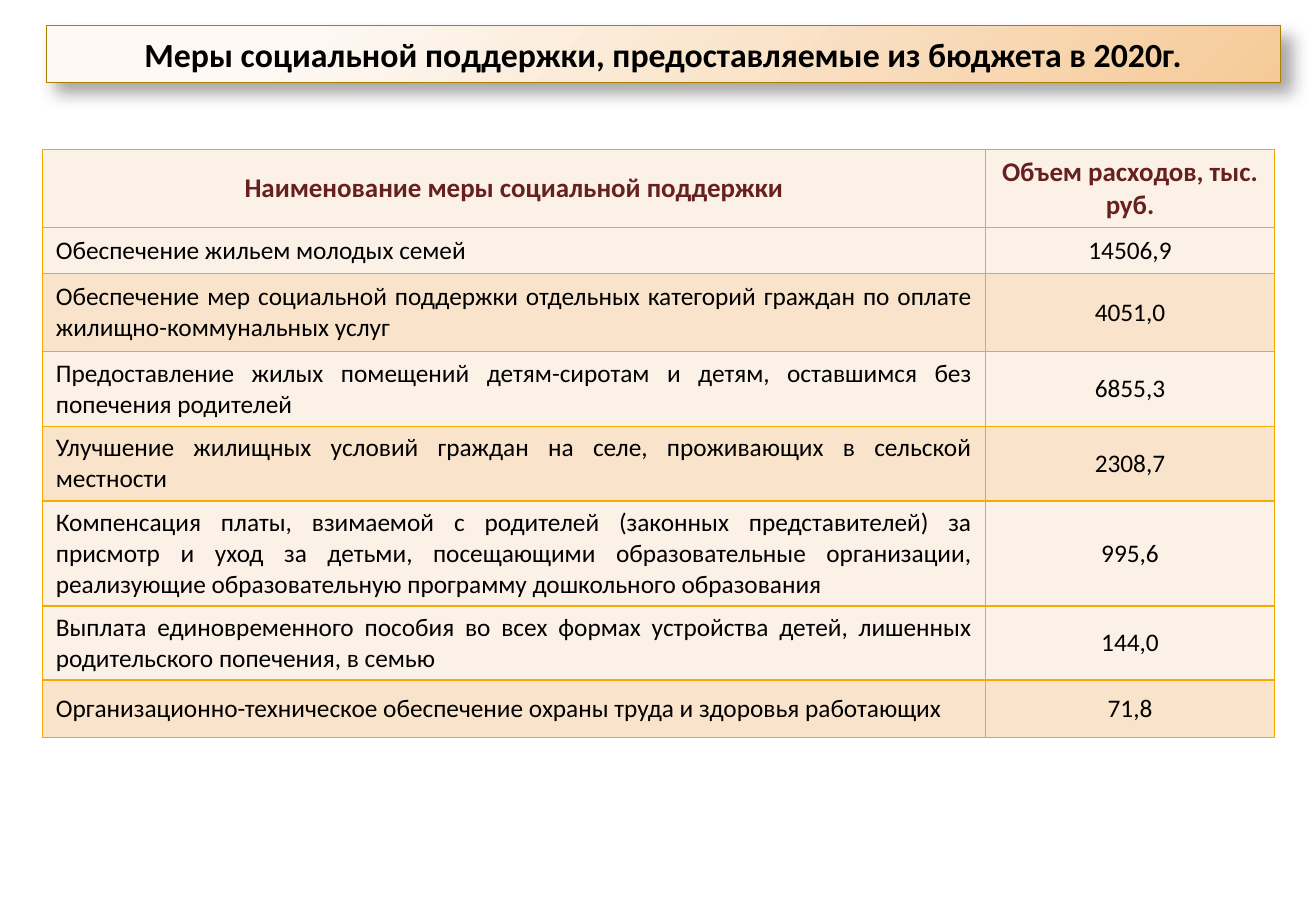
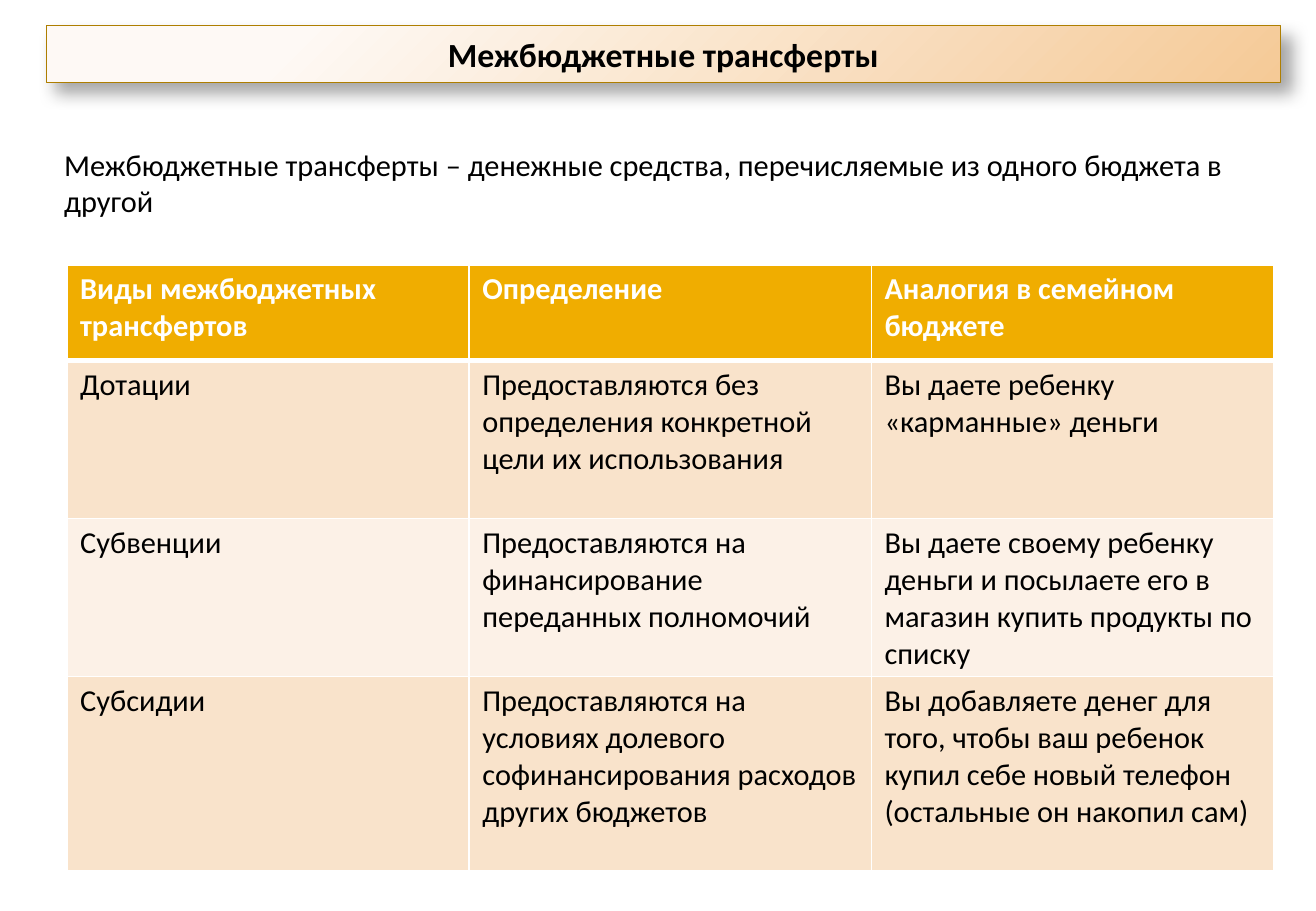
from pptx import Presentation
from pptx.dml.color import RGBColor
from pptx.enum.text import MSO_ANCHOR, MSO_AUTO_SIZE, PP_ALIGN
from pptx.oxml import parse_xml
from pptx.oxml.ns import nsdecls, qn
from pptx.util import Inches, Pt

LEFT, CENTER, JUSTIFY = PP_ALIGN.LEFT, PP_ALIGN.CENTER, PP_ALIGN.JUSTIFY
TOP, MIDDLE = MSO_ANCHOR.TOP, MSO_ANCHOR.MIDDLE
NO_FIT, GROW = MSO_AUTO_SIZE.NONE, MSO_AUTO_SIZE.SHAPE_TO_FIT_TEXT
TITLE_ONLY = 5

FONT = "Calibri"
BLACK, WHITE, MAROON = "000000", "FFFFFF", "672020"
GOLD, DARK_GOLD = "F0AD00", "AE7E00"
CREAM, PEACH = "FCF1E7", "F9E3CB"
BAND_LIGHT, BAND_DARK = "FEF9F5", "F5CA97"

SUPPORT_ROWS = [
    ("Наименование меры социальной поддержки", "Объем расходов, тыс. руб."),
    ("Обеспечение жильем молодых семей", "14506,9"),
    ("Обеспечение мер социальной поддержки отдельных категорий граждан "
     "по оплате жилищно-коммунальных услуг", "4051,0"),
    ("Предоставление жилых помещений детям-сиротам и детям, "
     "оставшимся без попечения родителей", "6855,3"),
    ("Улучшение жилищных условий граждан на селе, "
     "проживающих в сельской местности", "2308,7"),
    ("Компенсация платы, взимаемой с родителей (законных представителей) "
     "за присмотр и уход за детьми, посещающими образовательные организации, "
     "реализующие образовательную программу дошкольного образования", "995,6"),
    ("Выплата единовременного пособия во всех формах устройства детей, "
     "лишенных родительского попечения, в семью", "144,0"),
    ("Организационно-техническое обеспечение охраны труда "
     "и здоровья работающих", "71,8"),
]
SUPPORT_HEIGHTS = [0.64, 0.38, 0.64, 0.62, 0.61, 0.86, 0.61, 0.47]
SUPPORT_FILLS = [CREAM, CREAM, PEACH, CREAM, PEACH, CREAM, CREAM, PEACH]

TRANSFER_ROWS = [
    ("Виды межбюджетных трансфертов", "Определение",
     "Аналогия в семейном бюджете"),
    ("Дотации",
     "Предоставляются без определения конкретной цели их использования",
     "Вы даете ребенку «карманные» деньги"),
    ("Субвенции",
     "Предоставляются на финансирование переданных полномочий",
     "Вы даете своему ребенку деньги и посылаете его в магазин "
     "купить продукты по списку"),
    ("Субсидии",
     "Предоставляются на условиях долевого софинансирования расходов "
     "других бюджетов",
     "Вы добавляете денег для того, чтобы ваш ребенок купил себе "
     "новый телефон (остальные он накопил сам)"),
]
TRANSFER_HEIGHTS = [0.79, 1.3, 1.3, 1.6]
TRANSFER_FILLS = [GOLD, PEACH, CREAM, PEACH]


def color(value):
    return RGBColor.from_string(value)


def write(frame, text, size, ink=BLACK, bold=False, align=LEFT):
    frame.text = text
    para = frame.paragraphs[0]
    para.alignment = align
    para.font.name = FONT
    para.font.size = Pt(size)
    para.font.bold = bold
    para.font.color.rgb = color(ink)


def fill_band(shape):
    shape.fill.gradient()
    stops = zip(shape.fill.gradient_stops, (0.2, 1), (BAND_LIGHT, BAND_DARK))
    for stop, position, value in stops:
        stop.position = position
        stop.color.rgb = color(value)
    gradient = shape._element.spPr.find(qn("a:gradFill"))
    gradient.remove(gradient.find(qn("a:lin")))
    gradient.append(parse_xml(
        f'<a:path {nsdecls("a")} path="circle"><a:fillToRect l="-15000" '
        't="-15000" r="115000" b="115000"/></a:path>'))


def cast_shadow(shape):
    shape.shadow.inherit = False
    effects = shape._element.spPr.find(qn("a:effectLst"))
    effects.append(parse_xml(
        f'<a:outerShdw {nsdecls("a")} blurRad="{Pt(10.2)}" dist="{Pt(8)}" '
        f'dir="2700000" algn="tl" rotWithShape="0"><a:srgbClr val="{BLACK}">'
        '<a:alpha val="35000"/></a:srgbClr></a:outerShdw>'))


def add_titled_slide(deck, text):
    page = deck.slides.add_slide(deck.slide_layouts[TITLE_ONLY])
    title = page.shapes.title
    title.left, title.top = Inches(0.38), Inches(0.21)
    title.width, title.height = Inches(10.16), Inches(0.47)
    fill_band(title)
    title.line.color.rgb = color(DARK_GOLD)
    title.line.width = Pt(0.75)
    cast_shadow(title)
    frame = title.text_frame
    frame.auto_size = NO_FIT
    frame.word_wrap = True
    frame.vertical_anchor = MIDDLE
    write(frame, text, 20, bold=True, align=CENTER)
    return page


def set_borders(cell, value, widths):
    properties = cell._tc.get_or_add_tcPr()
    for index, (side, width) in enumerate(zip("LRTB", widths)):
        properties.insert(index, parse_xml(
            f'<a:ln{side} {nsdecls("a")} w="{Pt(width)}"><a:solidFill>'
            f'<a:srgbClr val="{value}"/></a:solidFill></a:ln{side}>'))


def add_grid(page, left, top, widths, heights):
    frame = page.shapes.add_table(
        len(heights), len(widths), Inches(left), Inches(top),
        Inches(sum(widths)), Inches(sum(heights)))
    table = frame.table
    table.horz_banding = False
    for column, width in zip(table.columns, widths):
        column.width = Inches(width)
    for row, height in zip(table.rows, heights):
        row.height = Inches(height)
    return table


def fill_cell(cell, text, fill, anchor, border, widths, **style):
    cell.fill.solid()
    cell.fill.fore_color.rgb = color(fill)
    cell.vertical_anchor = anchor
    cell.margin_left = cell.margin_right = Inches(0.11)
    cell.margin_top = cell.margin_bottom = Inches(0.05)
    set_borders(cell, border, widths)
    write(cell.text_frame, text, **style)


def build_support_slide(deck):
    page = add_titled_slide(
        deck, "Меры социальной поддержки, предоставляемые из бюджета в 2020г.")
    table = add_grid(page, 0.35, 1.23, [7.76, 2.38], SUPPORT_HEIGHTS)
    for row, (texts, fill) in enumerate(zip(SUPPORT_ROWS, SUPPORT_FILLS)):
        header = row == 0
        for column, text in enumerate(texts):
            fill_cell(table.cell(row, column), text, fill, MIDDLE,
                      GOLD, (1, 1, 1, 1),
                      size=16 if header else 15,
                      ink=MAROON if header else BLACK, bold=header,
                      align=CENTER if header or column else JUSTIFY)


def build_transfer_slide(deck):
    page = add_titled_slide(deck, "Межбюджетные трансферты")
    box = page.shapes.add_textbox(
        Inches(0.43), Inches(1.15), Inches(10.11), Inches(0.71))
    box.text_frame.word_wrap = True
    box.text_frame.auto_size = GROW
    write(box.text_frame,
          "Межбюджетные трансферты – денежные средства, перечисляемые "
          "из одного бюджета в другой", 18)
    table = add_grid(page, 0.55, 2.18, [3.31] * 3, TRANSFER_HEIGHTS)
    for row, (texts, fill) in enumerate(zip(TRANSFER_ROWS, TRANSFER_FILLS)):
        header = row == 0
        widths = (1, 1, 3 if row == 1 else 1, 3 if header else 1)
        for column, text in enumerate(texts):
            fill_cell(table.cell(row, column), text, fill, TOP, WHITE, widths,
                      size=18, ink=WHITE if header else BLACK, bold=header)


def main():
    deck = Presentation()
    deck.slide_width, deck.slide_height = Inches(10.83), Inches(7.5)
    build_support_slide(deck)
    build_transfer_slide(deck)
    deck.save("out.pptx")


if __name__ == "__main__":
    main()
